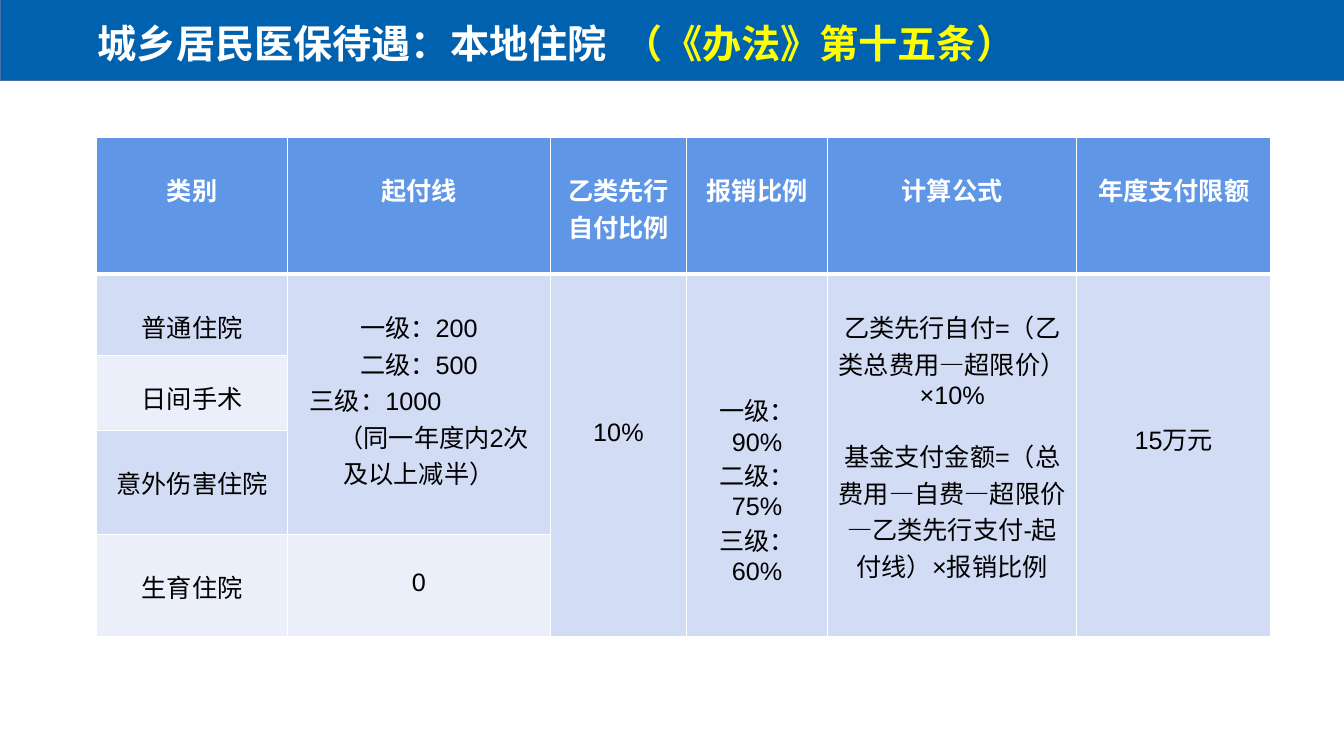
from lxml.etree import SubElement
from pptx import Presentation
from pptx.dml.color import RGBColor
from pptx.enum.shapes import MSO_SHAPE
from pptx.enum.text import MSO_ANCHOR, PP_ALIGN
from pptx.oxml.ns import qn
from pptx.util import Cm, Pt

COLORS = {
    "banner": "0061AE",
    "banner_line": "476FAA",
    "header": "6096E6",
    "band_dark": "D2DDF5",
    "band_light": "EAEFFA",
    "white": "FFFFFF",
    "yellow": "FFFF00",
    "black": "000000",
}
CHINESE_FONT = "Noto Sans CJK SC"
COLUMN_WIDTHS = [4.8, 6.63, 3.43, 3.56, 6.27, 4.9]
ROW_HEIGHTS = [3.45, 2.06, 1.88, 2.62, 2.57]
HEADERS = ["类别", "起付线", "乙类先行自付比例", "报销比例", "计算公式", "年度支付限额"]
CATEGORIES = ["普通住院", "日间手术", "意外伤害住院", "生育住院"]
TEXT_TOP = 0.87


def color(name):
    """Return the named colour of the palette."""
    return RGBColor.from_string(COLORS[name])


def add_text(paragraph, text, size=18, font="Arial", fill="black", bold=False,
             align=PP_ALIGN.CENTER, spacing=0):
    """Append a formatted run to a paragraph."""
    paragraph.alignment = align
    run = paragraph.add_run()
    run.text = text
    run.font.size = Pt(size)
    run.font.bold = bold
    run.font.color.rgb = color(fill)
    run.font.name = font
    properties = run._r.get_or_add_rPr()
    SubElement(properties, qn("a:ea")).set("typeface", CHINESE_FONT)
    if spacing:
        properties.set("spc", str(spacing * 100))


def set_borders(cell, top=1, bottom=1):
    """Give a cell white borders of the given widths in points."""
    properties = cell._tc.get_or_add_tcPr()
    for side, width in (("L", 1), ("R", 1), ("T", top), ("B", bottom)):
        line = SubElement(properties, qn(f"a:ln{side}"), w=str(Pt(width)))
        fill = SubElement(line, qn("a:solidFill"))
        SubElement(fill, qn("a:srgbClr"), val=COLORS["white"])


def fill_cell(cell, lines, top=TEXT_TOP, **text_format):
    """Write one paragraph per line, starting at a distance from the cell top."""
    cell.margin_top = Cm(top)
    cell.vertical_anchor = MSO_ANCHOR.TOP
    frame = cell.text_frame
    for index, line in enumerate(lines):
        paragraph = frame.add_paragraph() if index else frame.paragraphs[0]
        add_text(paragraph, line, **text_format)
    return frame.paragraphs


def add_banner(slide, left, top, width, height):
    """Draw the blue banner and set the slide title on it."""
    banner = slide.shapes.add_shape(
        MSO_SHAPE.RECTANGLE, Cm(left), Cm(top), Cm(width), Cm(height))
    banner.shadow.inherit = False
    banner.fill.solid()
    banner.fill.fore_color.rgb = color("banner")
    banner.line.color.rgb = color("banner_line")
    banner.line.width = Pt(1)

    title = slide.shapes.title
    banner._element.addnext(title._element)
    title.left, title.top = Cm(left + 2.21), Cm(top + 0.44)
    title.width, title.height = Cm(23.85), Cm(3.84)
    frame = title.text_frame
    frame.word_wrap = False
    frame.vertical_anchor = MSO_ANCHOR.TOP
    frame.margin_top = Cm(0.07)
    paragraph = frame.paragraphs[0]
    paragraph.line_spacing = 1.0
    title_format = dict(size=28, font=CHINESE_FONT, bold=True, align=PP_ALIGN.LEFT)
    add_text(paragraph, "城乡居民医保待遇：本地住院", fill="white", **title_format)
    add_text(paragraph, " ", fill="white", spacing=6, **title_format)
    add_text(paragraph, "（《办法》第十五条）", fill="yellow", **title_format)


def add_benefit_table(slide, left, top):
    """Add the table of inpatient benefits."""
    table = slide.shapes.add_table(
        len(ROW_HEIGHTS), len(COLUMN_WIDTHS), Cm(left), Cm(top),
        Cm(sum(COLUMN_WIDTHS)), Cm(sum(ROW_HEIGHTS))).table
    for column, width in zip(table.columns, COLUMN_WIDTHS):
        column.width = Cm(width)
    for row, height in zip(table.rows, ROW_HEIGHTS):
        row.height = Cm(height)

    for row_index in range(len(ROW_HEIGHTS)):
        band = "band_dark" if row_index % 2 else "band_light"
        for column_index in range(len(COLUMN_WIDTHS)):
            cell = table.cell(row_index, column_index)
            set_borders(cell, top=3 if row_index == 1 else 1,
                        bottom=3 if row_index == 0 else 1)
            cell.fill.solid()
            cell.fill.fore_color.rgb = color(band if row_index else "header")

    table.cell(1, 1).merge(table.cell(3, 1))
    for column_index in range(2, len(COLUMN_WIDTHS)):
        table.cell(1, column_index).merge(table.cell(4, column_index))

    for column_index, header in enumerate(HEADERS):
        fill_cell(table.cell(0, column_index), [header], fill="white", bold=True)
    for row_index, category in enumerate(CATEGORIES, start=1):
        is_day_surgery = category == "日间手术"
        paragraphs = fill_cell(table.cell(row_index, 0), [category],
                               top=0.13 if is_day_surgery else TEXT_TOP)
        if is_day_surgery:
            paragraphs[0].line_spacing = 1.5

    deductibles = fill_cell(table.cell(1, 1), [
        "一级：200", "二级：500", "三级：1000", "（同一年度内2次及以上减半）"])
    deductibles[2].alignment = PP_ALIGN.LEFT
    deductibles[2]._p.get_or_add_pPr().set("marL", str(Cm(0.31)))
    deductibles[3]._p.get_or_add_pPr().set("indent", str(Cm(0.75)))
    fill_cell(table.cell(4, 1), ["0"])

    fill_cell(table.cell(1, 2), ["10%"], top=3.64)
    fill_cell(table.cell(1, 3), ["一级：90%", "二级：75%", "三级：60%"], top=2.97)
    formulas = fill_cell(table.cell(1, 4), [
        "乙类先行自付=（乙类总费用—超限价）×10%",
        "基金支付金额=（总费用—自费—超限价—乙类先行支付-起付线）×报销比例"])
    formulas[1].space_before = Pt(20)
    fill_cell(table.cell(1, 5), ["15万元"], top=3.7)


def main():
    """Build and save the presentation."""
    presentation = Presentation()
    presentation.slide_width, presentation.slide_height = Cm(33.87), Cm(19.05)
    slide = presentation.slides.add_slide(presentation.slide_layouts[5])
    add_banner(slide, 0, -0.03, 33.99, 2.06)
    add_benefit_table(slide, 2.44, 3.45)
    presentation.save("out.pptx")


if __name__ == "__main__":
    main()
